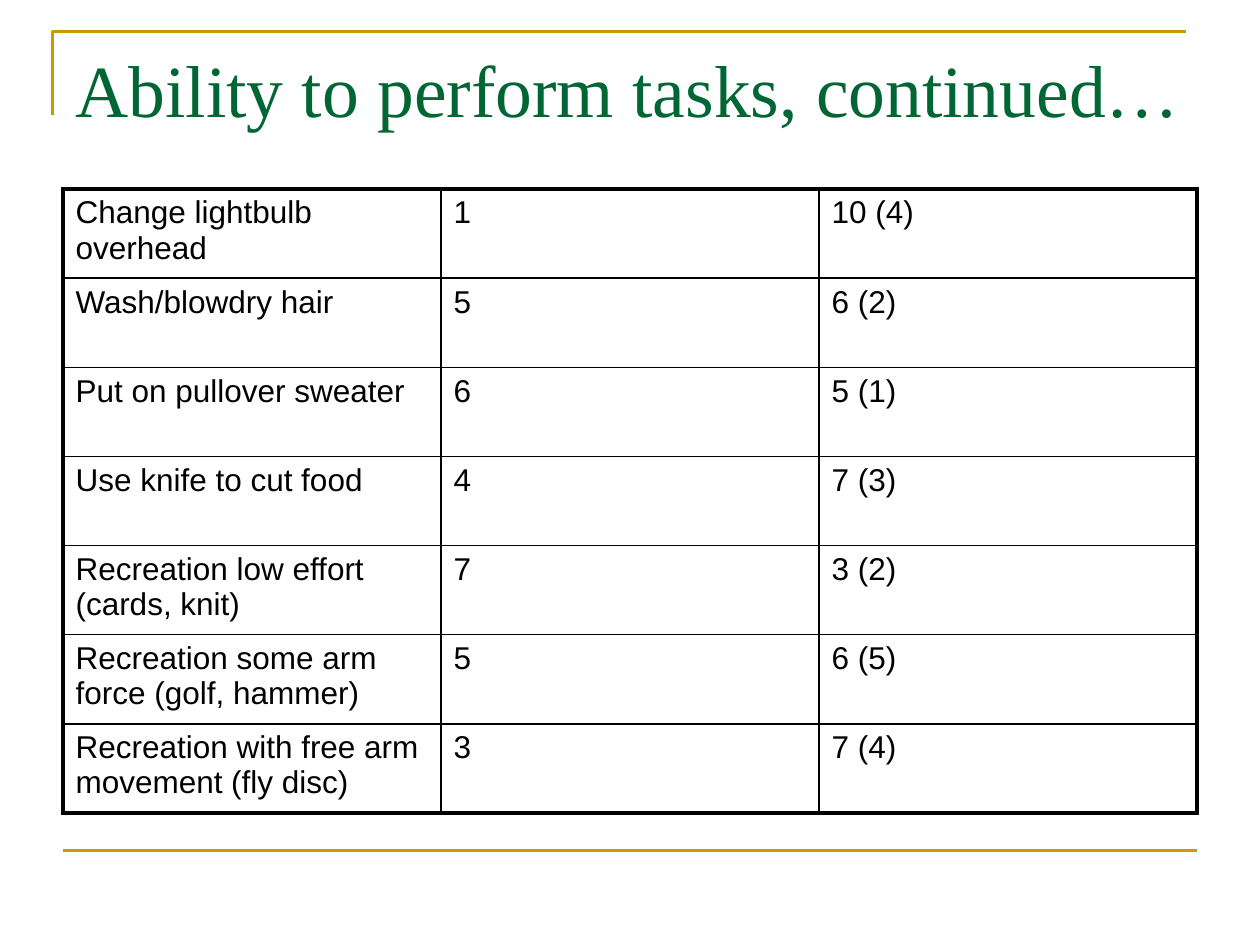
from dataclasses import dataclass

from lxml.etree import SubElement
from pptx import Presentation
from pptx.dml.color import RGBColor
from pptx.enum.shapes import MSO_CONNECTOR
from pptx.enum.text import MSO_ANCHOR, PP_ALIGN
from pptx.oxml.ns import qn
from pptx.util import Pt


@dataclass(frozen=True)
class Theme:
    title_color: str = "006633"
    accent: str = "CC9900"
    ink: str = "000000"
    title_font: str = "Times New Roman"
    body_font: str = "Arial"
    title_size: float = 42
    body_size: float = 18
    rule: float = 1.5
    outer_border: float = 2.25
    inner_border: float = 1


THEME = Theme()

TASKS = [
    ("Change lightbulb overhead", "1", "10 (4)"),
    ("Wash/blowdry hair", "5", "6 (2)"),
    ("Put on pullover sweater", "6", "5 (1)"),
    ("Use knife to cut food", "4", "7 (3)"),
    ("Recreation low effort (cards, knit)", "7", "3 (2)"),
    ("Recreation some arm force (golf, hammer)", "5", "6 (5)"),
    ("Recreation with free arm movement (fly disc)", "3", "7 (4)"),
]


def format_text(p, font, size, color):
    p.alignment = PP_ALIGN.LEFT
    for r in p.runs:
        r.font.name = font
        r.font.size = Pt(size)
        r.font.color.rgb = RGBColor.from_string(color)


def style_rule(line):
    line.color.rgb = RGBColor.from_string(THEME.accent)
    line.width = Pt(THEME.rule)


def add_corner(s, left, top, right, bottom):
    builder = s.shapes.build_freeform(Pt(left), Pt(bottom))
    builder.add_line_segments(
        [(Pt(left), Pt(top)), (Pt(right), Pt(top))], close=False)
    sp = builder.convert_to_shape()
    sp.fill.background()
    sp.shadow.inherit = False
    style_rule(sp.line)


def add_rule(s, left, right, y):
    sp = s.shapes.add_connector(
        MSO_CONNECTOR.STRAIGHT, Pt(left), Pt(y), Pt(right), Pt(y))
    style_rule(sp.line)
    SubElement(sp._element.spPr, qn("a:effectLst"))


def set_title(s, text, left, top, width, height):
    sp = s.shapes.title
    sp.left, sp.top, sp.width, sp.height = map(Pt, (left, top, width, height))
    tf = sp.text_frame
    tf.text = text
    tf.word_wrap = True
    tf.vertical_anchor = MSO_ANCHOR.TOP
    format_text(tf.paragraphs[0], THEME.title_font, THEME.title_size,
                THEME.title_color)


def set_borders(cell, outer_sides):
    tc_pr = cell._tc.get_or_add_tcPr()
    # Borders come before the fill in the cell properties
    for i, side in enumerate(("L", "R", "T", "B")):
        width = (THEME.outer_border if side in outer_sides
                 else THEME.inner_border)
        ln = SubElement(tc_pr, qn(f"a:ln{side}"), w=str(Pt(width)))
        fill = SubElement(ln, qn("a:solidFill"))
        SubElement(fill, qn("a:srgbClr"), val=THEME.ink)
        tc_pr.insert(i, ln)


def add_task_table(s, rows, left, top, width, height):
    n_rows, n_cols = len(rows), len(rows[0])
    table = s.shapes.add_table(n_rows, n_cols, Pt(left), Pt(top),
                               Pt(width), Pt(height)).table
    table.first_row = False
    table.horz_banding = False
    for row in table.rows:
        row.height = Pt(height / n_rows)
    for i, values in enumerate(rows):
        for j, value in enumerate(values):
            cell = table.cell(i, j)
            cell.text_frame.text = value
            format_text(cell.text_frame.paragraphs[0], THEME.body_font,
                        THEME.body_size, THEME.ink)
            cell.fill.background()
            edges = {"L": j == 0, "R": j == n_cols - 1,
                     "T": i == 0, "B": i == n_rows - 1}
            set_borders(cell, [side for side, outer in edges.items() if outer])


def main():
    prs = Presentation()
    prs.slide_width, prs.slide_height = Pt(720), Pt(540)
    s = prs.slides.add_slide(prs.slide_layouts.get_by_name("Title Only"))

    # Frame lines
    add_corner(s, left=30, top=18, right=678, bottom=66)
    add_rule(s, left=36, right=684, y=486)

    # Title and table
    set_title(s, "Ability to perform tasks, continued…", 36, 21.6, 648, 90)
    add_task_table(s, TASKS, 36, 108, 648, 356.6)

    prs.save("out.pptx")


if __name__ == "__main__":
    main()
